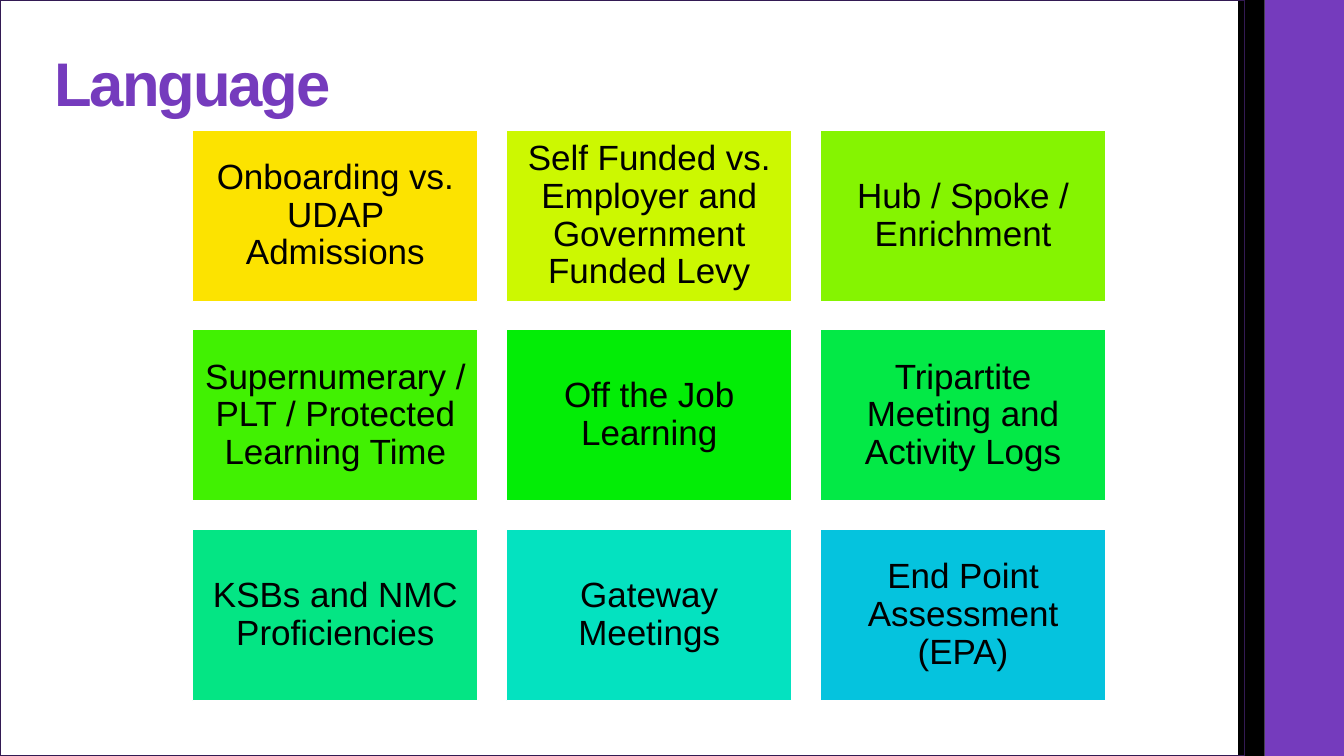
"""Build the Language slide: a title, a side band and a grid of nine terms."""
import pptx
import pptx.dml.color
import pptx.enum.shapes
import pptx.enum.text
import pptx.util

Cm = pptx.util.Cm
Pt = pptx.util.Pt
RGBColor = pptx.dml.color.RGBColor
Align = pptx.enum.text.PP_ALIGN
Anchor = pptx.enum.text.MSO_ANCHOR

PURPLE = RGBColor(0x75, 0x3B, 0xBD)
DARK_PURPLE = RGBColor(0x33, 0x1A, 0x53)
BLACK = RGBColor(0, 0, 0)
WHITE = RGBColor(0xFF, 0xFF, 0xFF)
YELLOW = RGBColor(0xFC, 0xE3, 0x00)
LEMON = RGBColor(0xCC, 0xF8, 0x01)
LIME = RGBColor(0x85, 0xF4, 0x01)
LEAF = RGBColor(0x41, 0xF1, 0x02)
GREEN = RGBColor(0x03, 0xED, 0x06)
EMERALD = RGBColor(0x03, 0xE9, 0x46)
MINT = RGBColor(0x04, 0xE5, 0x84)
TURQUOISE = RGBColor(0x04, 0xE2, 0xC0)
SKY = RGBColor(0x05, 0xC3, 0xDE)

TERMS = [
    ("Onboarding vs. UDAP Admissions", YELLOW),
    ("Self Funded vs. Employer and Government Funded Levy", LEMON),
    ("Hub / Spoke / Enrichment", LIME),
    ("Supernumerary / PLT / Protected Learning Time", LEAF),
    ("Off the Job Learning", GREEN),
    ("Tripartite Meeting and Activity Logs", EMERALD),
    ("KSBs and NMC Proficiencies", MINT),
    ("Gateway Meetings", TURQUOISE),
    ("End Point Assessment (EPA)", SKY),
]
COLUMNS = 3
GRID_LEFT, GRID_TOP = 4.85, 3.28
TILE_WIDTH, TILE_HEIGHT = 7.2, 4.32
COLUMN_STEP, ROW_STEP = 7.91, 5.03
PAGE_WIDTH, PAGE_HEIGHT = 33.87, 19.05


def write_text(frame, text, *, font, size, color, bold=False, align=Align.LEFT,
               anchor=Anchor.MIDDLE, inset=0, tracking=None):
    frame.word_wrap = True
    frame.vertical_anchor = anchor
    frame.margin_left = frame.margin_right = Cm(inset)
    frame.margin_top = frame.margin_bottom = Cm(inset)
    paragraph = frame.paragraphs[0]
    paragraph.alignment = align
    paragraph.line_spacing = 0.9
    run = paragraph.add_run()
    run.text = text
    run.font.name = font
    run.font.size = Pt(size)
    run.font.bold = bold
    run.font.color.rgb = color
    if tracking is not None:
        run.font._element.set("spc", str(round(tracking * 100)))


class SlideBuilder:
    def __init__(self, slide, font="Arial"):
        self.slide = slide
        self.font = font

    def rectangle(self, left, top, width, height, fill=None, line=None):
        box = self.slide.shapes.add_shape(
            pptx.enum.shapes.MSO_SHAPE.RECTANGLE,
            Cm(left), Cm(top), Cm(width), Cm(height))
        box.shadow.inherit = False
        if fill is None:
            box.fill.background()
        else:
            box.fill.solid()
            box.fill.fore_color.rgb = fill
        if line is None:
            box.line.fill.background()
        else:
            box.line.color.rgb = line
            box.line.width = Pt(1)
        return box

    def title(self, text):
        heading = self.slide.shapes.add_textbox(
            Cm(1.37), Cm(1.32), Cm(28.5), Cm(1.7))
        write_text(heading.text_frame, text, font=self.font, size=44,
                   color=PURPLE, bold=True, anchor=Anchor.BOTTOM, tracking=-1.5)

    def tile(self, left, top, text, fill):
        term = self.rectangle(left, top, TILE_WIDTH, TILE_HEIGHT, fill, WHITE)
        write_text(term.text_frame, text, font=self.font, size=25,
                   color=BLACK, align=Align.CENTER, inset=0.25)


def main():
    presentation = pptx.Presentation()
    presentation.slide_width = Cm(PAGE_WIDTH)
    presentation.slide_height = Cm(PAGE_HEIGHT)
    builder = SlideBuilder(
        presentation.slides.add_slide(presentation.slide_layouts[6]))
    builder.rectangle(31.87, 0, 2, PAGE_HEIGHT, PURPLE)
    builder.rectangle(31.2, 0, 0.67, PAGE_HEIGHT, BLACK)
    builder.rectangle(0, 0, 31.37, PAGE_HEIGHT, line=DARK_PURPLE)
    builder.title("Language")
    for index, (text, fill) in enumerate(TERMS):
        row, column = divmod(index, COLUMNS)
        builder.tile(GRID_LEFT + column * COLUMN_STEP,
                     GRID_TOP + row * ROW_STEP, text, fill)
    presentation.save("out.pptx")


if __name__ == "__main__":
    main()
